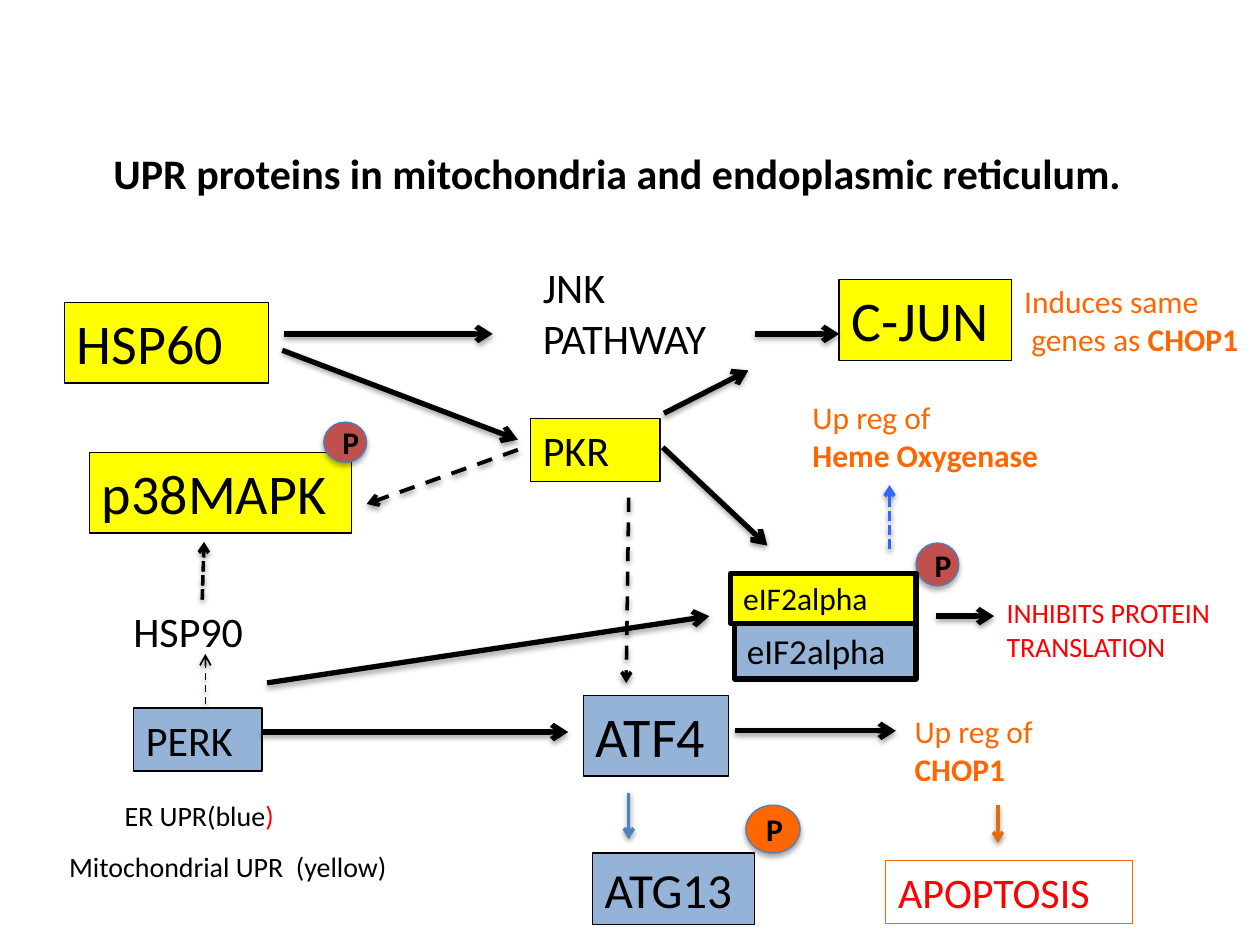
from dataclasses import dataclass

from lxml.etree import SubElement
from pptx import Presentation
from pptx.dml.color import RGBColor
from pptx.enum.dml import MSO_LINE as DASH
from pptx.enum.shapes import MSO_CONNECTOR, MSO_SHAPE as SHAPE
from pptx.enum.text import MSO_ANCHOR as ANCHOR, MSO_AUTO_SIZE as FIT, PP_ALIGN as ALIGN
from pptx.oxml.ns import qn
from pptx.util import Inches, Pt


@dataclass(frozen=True)
class Theme:
    font: str = "Calibri"
    black: str = "000000"
    white: str = "FFFFFF"
    yellow: str = "FFFF00"
    blue: str = "95B3D7"
    red: str = "FF0000"
    orange: str = "FF6600"
    brick: str = "C0504D"
    badge_line: str = "4B7EBC"
    arrow_blue: str = "4F81BD"
    arrow_bright: str = "3366FF"
    arrow_orange: str = "E46C0A"
    huge: int = 32
    large: int = 28
    head: int = 24
    medium: int = 20
    body: int = 18
    small: int = 16
    thin: float = 0.75
    thick: float = 3


T = Theme()


def rgb(color):
    return RGBColor.from_string(color)


def bold(text):
    return text, {"bold": True}


class Diagram:
    def __init__(self, slide, theme):
        self.slide = slide
        self.theme = theme

    def _place(self, sp, at):
        sp.left, sp.top, sp.width, sp.height = map(Inches, at)

    def _shadow(self, sp, dist, alpha):
        effects = SubElement(sp._element.spPr, qn("a:effectLst"))
        shadow = SubElement(effects, qn("a:outerShdw"), blurRad="40000",
                            dist=str(dist), dir="5400000", rotWithShape="0")
        color = SubElement(shadow, qn("a:srgbClr"), val=self.theme.black)
        SubElement(color, qn("a:alpha"), val=str(alpha * 1000))

    def _write(self, sp, lines, size, color, align=ALIGN.LEFT, anchor=ANCHOR.TOP):
        tf = sp.text_frame
        tf.word_wrap = True
        tf.vertical_anchor = anchor
        for i, line in enumerate(lines):
            p = tf.add_paragraph() if i else tf.paragraphs[0]
            p.alignment = align
            p.font.name = self.theme.font
            p.font.size = Pt(size)
            p.font.color.rgb = rgb(color)
            for part in line if isinstance(line, list) else [line]:
                text, style = part if isinstance(part, tuple) else (part, {})
                r = p.add_run()
                r.text = text
                if "bold" in style:
                    r.font.bold = style["bold"]
                if "color" in style:
                    r.font.color.rgb = rgb(style["color"])

    def title(self, at, text):
        sp = self.slide.shapes.title
        self._place(sp, at)
        self._write(sp, [bold(text)], self.theme.head, self.theme.black)
        sp.text_frame.auto_size = FIT.NONE

    def label(self, at, lines, size, color=T.black):
        sp = self.slide.shapes.add_textbox(*map(Inches, at))
        self._write(sp, lines, size, color)
        return sp

    def box(self, at, text, size, fill=None, line=T.black, width=T.thin, color=T.black):
        sp = self.slide.shapes.add_shape(SHAPE.RECTANGLE, *map(Inches, at))
        sp.shadow.inherit = False
        if fill:
            sp.fill.solid()
            sp.fill.fore_color.rgb = rgb(fill)
        else:
            sp.fill.background()
        sp.line.color.rgb = rgb(line)
        sp.line.width = Pt(width)
        self._write(sp, [text], size, color)
        return sp

    def badge(self, at, fill):
        sp = self.slide.shapes.add_shape(SHAPE.OVAL, *map(Inches, at))
        sp.fill.solid()
        sp.fill.fore_color.rgb = rgb(fill)
        sp.line.color.rgb = rgb(self.theme.badge_line)
        sp.line.width = Pt(self.theme.thin)
        self._shadow(sp, 23000, 35)
        self._write(sp, [bold("P")], self.theme.body, self.theme.black,
                    ALIGN.CENTER, ANCHOR.MIDDLE)

    def arrow(self, start, end, width=T.thick, color=T.black, dash=None):
        sp = self.slide.shapes.add_connector(
            MSO_CONNECTOR.STRAIGHT, *map(Inches, (*start, *end)))
        sp.line.color.rgb = rgb(color)
        sp.line.width = Pt(width)
        if dash:
            sp.line.dash_style = dash
        SubElement(sp.line._get_or_add_ln(), qn("a:tailEnd"), type="arrow")
        self._shadow(sp, 20000, 38)
        return sp


def main():
    prs = Presentation()
    prs.slide_width, prs.slide_height = Inches(10), Inches(7.5)
    d = Diagram(prs.slides.add_slide(prs.slide_layouts[5]), T)

    d.title((0.8, 1.12, 8.93, 0.5), "UPR proteins in mitochondria and endoplasmic reticulum.")

    d.label((4.21, 2.03, 1.8, 0.91), ["JNK PATHWAY"], T.head)
    hsp90 = d.label((0.96, 4.76, 1.29, 0.5), ["HSP90"], T.head)
    d.label((0.45, 6.69, 4.02, 0.37), ["Mitochondrial UPR  (yellow)"], T.small)
    d.label((0.89, 6.29, 2.88, 0.37), [["ER UPR(blue", (")", {"color": T.red})]], T.small)
    d.label((7.89, 4.68, 1.97, 0.64), ["INHIBITS PROTEIN TRANSLATION"], T.small, T.red)
    d.label((8.03, 2.19, 3.29, 0.71),
            ["Induces same", [" genes as", bold(" CHOP1")]], T.body, T.orange)
    d.label((7.16, 5.6, 1.71, 0.71), ["Up reg of", bold("CHOP1")], T.body, T.orange)
    d.label((6.35, 3.11, 2.07, 0.71), ["Up reg of", bold("Heme Oxygenase")], T.body, T.orange)

    for at, text, size, fill in [
        ((0.51, 2.4, 1.62, 0.64), "HSP60", T.huge, T.yellow),
        ((6.66, 2.22, 1.37, 0.64), "C-JUN", T.huge, T.yellow),
        ((4.21, 3.32, 1.03, 0.5), "PKR", T.head, T.yellow),
        ((0.71, 3.59, 2.08, 0.64), "p38MAPK", T.huge, T.yellow),
        ((1.06, 5.62, 1.02, 0.5), "PERK", T.head, T.blue),
        ((4.63, 5.52, 1.15, 0.64), "ATF4", T.huge, T.blue),
        ((4.7, 6.77, 1.29, 0.57), "ATG13", T.large, T.blue),
    ]:
        d.box(at, text, size, fill)
    d.box((7.03, 6.83, 1.96, 0.5), "APOPTOSIS", T.head, line=T.orange, color=T.red)

    for at, fill in [
        ((2.57, 3.35, 0.34, 0.32), T.brick),
        ((7.27, 4.31, 0.34, 0.34), T.brick),
        ((5.92, 6.39, 0.43, 0.38), T.orange),
    ]:
        d.badge(at, fill)

    d.box((5.83, 4.95, 1.44, 0.44), "eIF2alpha", T.medium, T.blue, width=T.thick)
    d.box((5.8, 4.55, 1.47, 0.4), "eIF2alpha", T.body, T.yellow, width=T.thick)

    for start, end in [
        ((2.25, 2.65), (3.91, 2.65)),
        ((2.24, 2.78), (4.11, 3.49)),
        ((5.99, 2.65), (6.66, 2.65)),
        ((5.27, 3.28), (5.94, 2.94)),
        ((5.26, 3.55), (6.09, 4.33)),
        ((2.12, 5.42), (5.63, 4.89)),
        ((2.08, 5.81), (4.51, 5.81)),
        ((5.83, 5.8), (7.11, 5.8)),
        ((7.43, 4.89), (7.89, 4.89)),
    ]:
        d.arrow(start, end)

    d.arrow((4.99, 3.95), (4.97, 5.42), 2, dash=DASH.DASH)
    d.arrow((4.11, 3.57), (2.91, 4), 2.25, dash=DASH.DASH)
    d.arrow((1.63, 5.59), (1.63, 5.19), 1, dash=DASH.DASH)
    d.arrow((1.61, 4.76), (1.62, 4.3), 2, dash=DASH.SQUARE_DOT).begin_connect(hsp90, 0)
    d.arrow((7.06, 4.36), (7.06, 3.85), 2, T.arrow_bright, DASH.SQUARE_DOT)
    d.arrow((4.99, 6.29), (4.99, 6.66), 2, T.arrow_blue)
    d.arrow((7.92, 6.39), (7.92, 6.69), 2, T.arrow_orange)

    prs.save("out.pptx")


if __name__ == "__main__":
    main()
